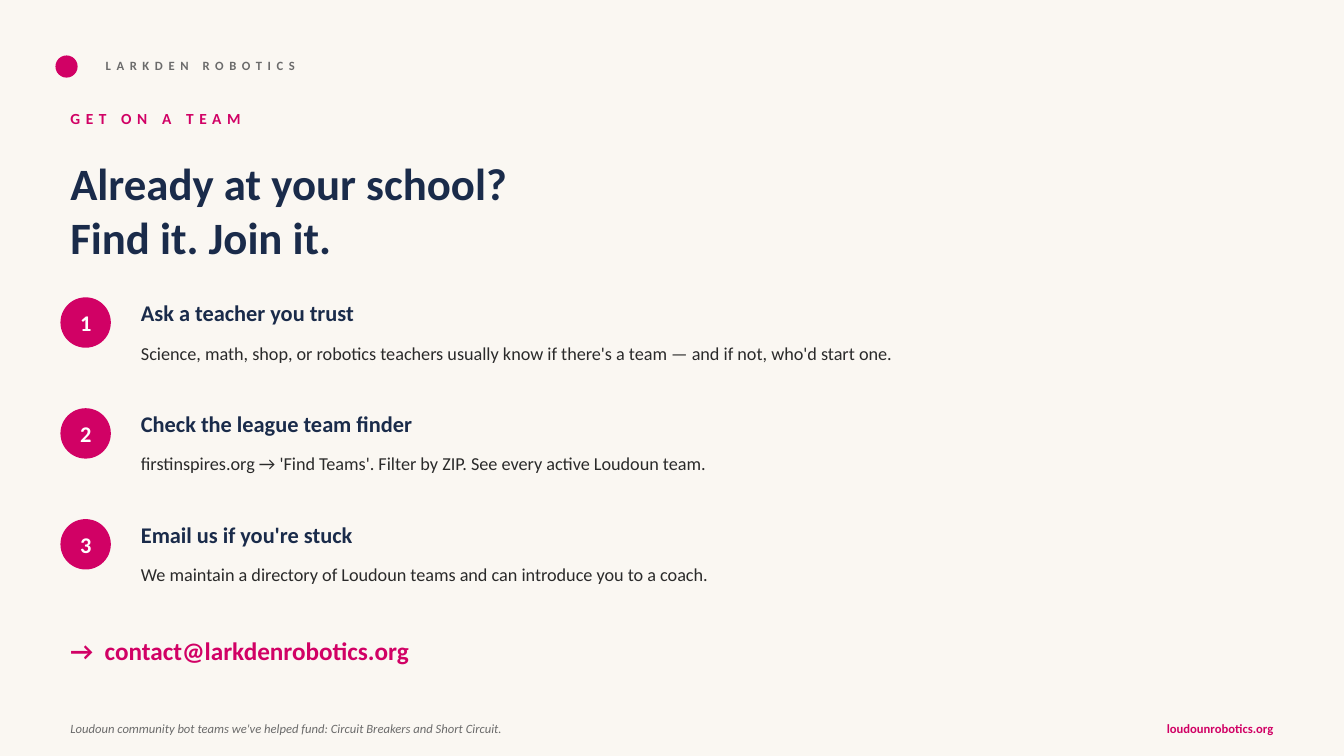
from dataclasses import dataclass

from lxml.etree import SubElement
from pptx import Presentation
from pptx.dml.color import RGBColor
from pptx.enum.shapes import MSO_SHAPE as Shape
from pptx.enum.text import MSO_ANCHOR as Anchor, PP_ALIGN as Align
from pptx.oxml.ns import qn
from pptx.util import Pt


@dataclass(frozen=True)
class Theme:
    """Colours, font and type sizes of the deck."""
    paper: str = "FAF7F2"
    accent: str = "D10165"
    navy: str = "1A2B4A"
    ink: str = "2A2A2A"
    muted: str = "6B6B6B"
    white: str = "FFFFFF"
    font: str = "Calibri"
    title: int = 32
    contact: int = 18
    heading: int = 16
    body: int = 13
    eyebrow: int = 11
    small: int = 9


THEME = Theme()
STEPS = [
    ("Ask a teacher you trust",
     "Science, math, shop, or robotics teachers usually know if there's a team — and if not, who'd start one."),
    ("Check the league team finder",
     "firstinspires.org → 'Find Teams'. Filter by ZIP. See every active Loudoun team."),
    ("Email us if you're stuck",
     "We maintain a directory of Loudoun teams and can introduce you to a coach."),
]


def add_text(page, box, lines, size, color, bold=False, italic=False,
             align=Align.LEFT, anchor=Anchor.MIDDLE, tracking=0):
    """Add a text box with one paragraph per line and return its frame."""
    frame = page.shapes.add_textbox(*map(Pt, box)).text_frame
    frame.word_wrap = True
    frame.vertical_anchor = anchor
    for index, line in enumerate(lines):
        para = frame.add_paragraph() if index else frame.paragraphs[0]
        para.alignment = align
        span = para.add_run()
        span.text = line
        font = span.font
        font.name, font.size = THEME.font, Pt(size)
        font.bold, font.italic = bold, italic
        font.color.rgb = RGBColor.from_string(color)
        if tracking:
            font._element.set("spc", str(tracking * 100))
    return frame


def add_dot(page, left, top, size):
    """Add a plain accent circle."""
    dot = page.shapes.add_shape(Shape.OVAL, Pt(left), Pt(top), Pt(size), Pt(size))
    dot.shadow.inherit = False
    dot.fill.solid()
    dot.fill.fore_color.rgb = RGBColor.from_string(THEME.accent)
    dot.line.fill.background()


def add_header(page, left, top, width):
    """Add the brand line, the eyebrow and the two-line title."""
    add_dot(page, left - 3.6, top + 3.6, 15.84)
    add_text(page, (left + 25.2, top, 360, 21.6), ["LARKDEN ROBOTICS"],
             THEME.small, THEME.muted, bold=True, tracking=4)
    add_text(page, (left, top + 36, 576, 25.2), ["GET ON A TEAM"],
             THEME.eyebrow, THEME.accent, bold=True, tracking=4)
    add_text(page, (left, top + 72, width, 82.8),
             ["Already at your school?", "Find it. Join it."],
             THEME.title, THEME.navy, bold=True, anchor=Anchor.TOP)


def add_step(page, left, top, width, number, heading, detail):
    """Add a numbered circle with its heading and detail."""
    badge, indent = 36, 50.4
    add_dot(page, left, top + 3.6, badge)
    add_text(page, (left, top + 3.6, badge, badge), [str(number)],
             THEME.heading, THEME.white, bold=True, align=Align.CENTER)
    add_text(page, (left + indent, top, width - indent, 28.8), [heading],
             THEME.heading, THEME.navy, bold=True)
    add_text(page, (left + indent, top + 25.2, width - indent, 36), [detail],
             THEME.body, THEME.ink)


def add_contact(page, left, top, width):
    """Add the e-mail line, with a tab stop after its arrow."""
    frame = add_text(page, (left, top, width, 28.8), ["→\tcontact@larkdenrobotics.org"],
                     THEME.contact, THEME.accent, bold=True, anchor=Anchor.TOP)
    para = frame.paragraphs[0]
    para.space_after = Pt(8)
    stops = SubElement(para._p.get_or_add_pPr(), qn("a:tabLst"))
    SubElement(stops, qn("a:tab"), pos=str(Pt(24.5)), algn="l")


def add_footer(page, left, top, width):
    """Add the funding note and the right-aligned web address."""
    height, address_width = 21.6, 172.8
    add_text(page, (left, top, width, height),
             ["Loudoun community bot teams we've helped fund: Circuit Breakers and Short Circuit."],
             THEME.small, THEME.muted, italic=True)
    add_text(page, (left + width - address_width, top, address_width, height),
             ["loudounrobotics.org"], THEME.small, THEME.accent, bold=True, align=Align.RIGHT)


def add_join_slide(deck):
    """Add the slide on how to join a team."""
    page = deck.slides.add_slide(deck.slide_layouts[6])
    page.background.fill.solid()
    page.background.fill.fore_color.rgb = RGBColor.from_string(THEME.paper)
    left, width = 43.2, 873.36
    add_header(page, left, 36, width)
    for index, (heading, detail) in enumerate(STEPS):
        add_step(page, left, 208.8 + 79.2 * index, 662.4, index + 1, heading, detail)
    add_contact(page, left, 450, width)
    add_footer(page, left, 509.76, width)


def main():
    """Build and save the deck."""
    deck = Presentation()
    deck.slide_width, deck.slide_height = Pt(960), Pt(540)
    add_join_slide(deck)
    deck.save("out.pptx")


if __name__ == "__main__":
    main()
